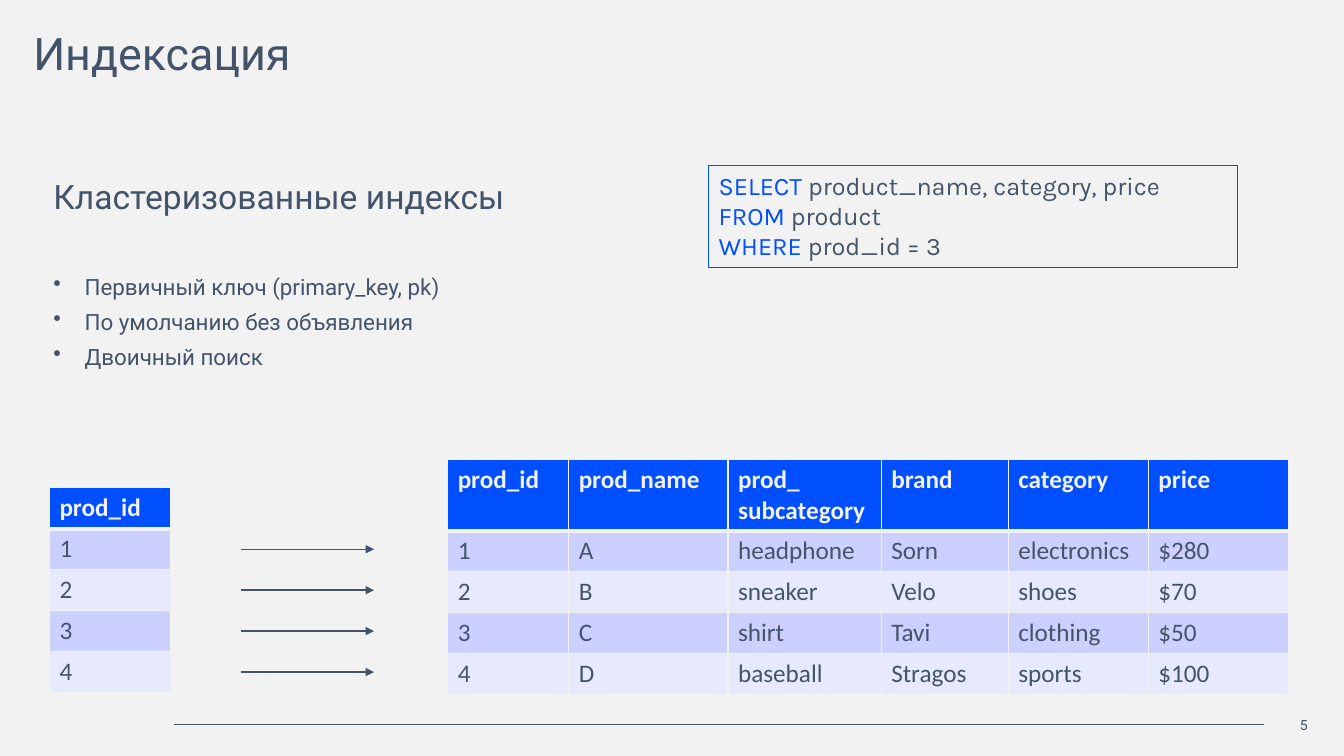
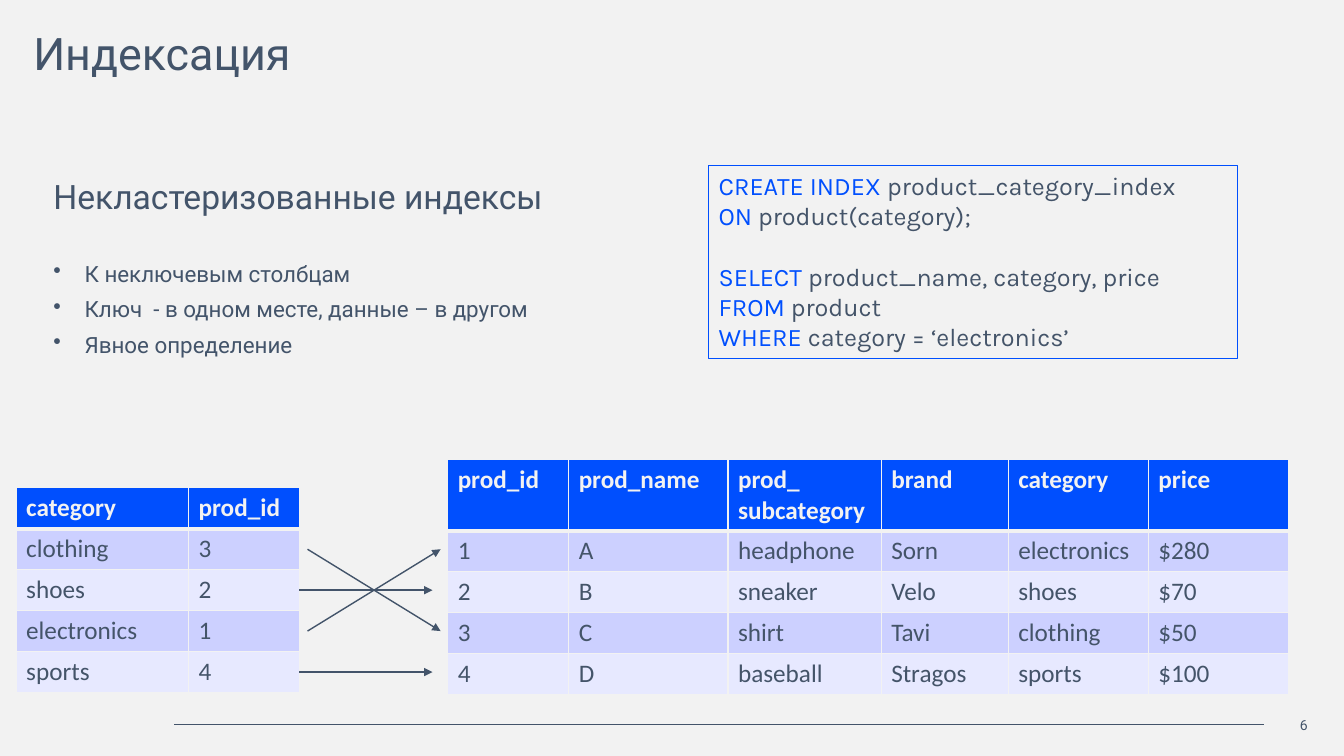
"""Build two slides on clustered and non-clustered database indexes."""
from lxml.etree import SubElement
from pptx import Presentation
from pptx.dml.color import RGBColor
from pptx.enum.shapes import MSO_CONNECTOR, MSO_SHAPE
from pptx.enum.text import MSO_ANCHOR, MSO_AUTO_SIZE, PP_ALIGN
from pptx.oxml import parse_xml
from pptx.oxml.ns import nsdecls, qn
from pptx.util import Inches, Pt

PAPER, INK, CELL_INK, BLUE = "F2F2F2", "43546A", "445469", "004FFE"
BANDS = ("CCD0FF", "E7E9FF")
TITLE = "Индексация"
ROW = 2.03 / 5
TALL_HEADER = 0.69
TABLES_BOTTOM = 6.87
ARROW_LENGTH = 1.32
CODE_LINE = 21.6

PRODUCTS = [
    ("prod_id", "prod_name", "prod_\nsubcategory", "brand", "category", "price"),
    ("1", "A", "headphone", "Sorn", "electronics", "$280"),
    ("2", "B", "sneaker", "Velo", "shoes", "$70"),
    ("3", "C", "shirt", "Tavi", "clothing", "$50"),
    ("4", "D", "baseball", "Stragos", "sports", "$100"),
]
PRODUCT_LEFT, PRODUCT_COLUMNS = 4.44, (1.2, 1.58, 1.52, 1.26, 1.39, 1.39)

TOPICS = [
    {
        "number": "5",
        "heading": "Кластеризованные индексы",
        "heading_gap": 40,
        "points": ["Первичный ключ (primary_key, pk)", "По умолчанию без объявления", "Двоичный поиск"],
        "statements": [
            [("SELECT", " product_name, category, price"), ("FROM", " product"), ("WHERE", " prod_id = 3")],
        ],
        "code_height": 1.01,
        "index": [("prod_id",), ("1",), ("2",), ("3",), ("4",)],
        "index_left": 0.49,
        "index_columns": (1.2,),
        "arrows": [(2.39, row, row) for row in range(1, 5)],
    },
    {
        "number": "6",
        "heading": "Некластеризованные индексы",
        "heading_gap": 31,
        "points": ["К неключевым столбцам", "Ключ  - в одном месте, данные – в другом", "Явное определение"],
        "statements": [
            [("CREATE INDEX", " product_category_index"), ("ON", " product(category);")],
            [("SELECT", " product_name, category, price"), ("FROM", " product"),
             ("WHERE", " category = ‘electronics’")],
        ],
        "code_height": 1.92,
        "index": [("category", "prod_id"), ("clothing", "3"), ("shoes", "2"), ("electronics", "1"), ("sports", "4")],
        "index_left": 0.16,
        "index_columns": (1.71, 1.1),
        "arrows": [(3.05, 1, 3), (2.97, 2, 2), (3.05, 3, 1), (2.97, 4, 4)],
    },
]


def rgb(code):
    return RGBColor.from_string(code)


def box(*lengths):
    return [Inches(length) for length in lengths]


def style(paragraph, size, face, color, bold=False):
    for run in paragraph.runs:
        run.font.size, run.font.name, run.font.bold = Pt(size), face, bold
        run.font.color.rgb = rgb(color)


def prepare(frame, left=0, top=0, right=0, bottom=0, anchor=MSO_ANCHOR.TOP):
    frame.word_wrap, frame.auto_size, frame.vertical_anchor = True, MSO_AUTO_SIZE.NONE, anchor
    frame.margin_left, frame.margin_top, frame.margin_right, frame.margin_bottom = box(left, top, right, bottom)


def add_line(slide, start, end, arrow=False):
    line = slide.shapes.add_connector(MSO_CONNECTOR.STRAIGHT, *box(*start, *end))
    line.line.color.rgb, line.line.width = rgb(INK), Pt(1)
    if arrow:
        SubElement(line.line._get_or_add_ln(), qn("a:tailEnd"), type="triangle")
    SubElement(line._element.spPr, qn("a:effectLst"))


def add_frame(slide, number):
    title = slide.shapes.title
    title.left, title.top, title.width, title.height = box(0.33, 0.26, 10.53, 0.54)
    prepare(title.text_frame)
    title.text_frame.text = TITLE
    title.text_frame.paragraphs[0].alignment = PP_ALIGN.LEFT
    style(title.text_frame.paragraphs[0], 32, "Roboto", INK)
    add_line(slide, (1.73, 7.19), (12.54, 7.19))
    page = slide.shapes.add_textbox(*box(12.54, 7.1, 0.43, 0.19)).text_frame
    prepare(page, anchor=MSO_ANCHOR.MIDDLE)
    page.text = number
    page.paragraphs[0].alignment = PP_ALIGN.RIGHT
    style(page.paragraphs[0], 10, "Roboto", INK)


def add_outline(slide, heading, gap, points):
    frame = slide.shapes.add_textbox(*box(0.33, 1.55, 6.2, 2.6)).text_frame
    prepare(frame, 0.2, 0.2, 0.2)
    frame.text = "\n".join([heading, *points])
    first, *bullets = frame.paragraphs
    first.space_after = Pt(gap)
    style(first, 24, "Roboto", INK)
    for bullet in bullets:
        properties = bullet._p.get_or_add_pPr()
        properties.set("marL", str(Inches(0.31)))
        properties.set("indent", str(-Inches(0.31)))
        SubElement(properties, qn("a:buChar"), char="•")
        bullet.space_after = Pt(6)
        style(bullet, 16, "Roboto", INK)


def add_code(slide, statements, height):
    panel = slide.shapes.add_shape(MSO_SHAPE.RECTANGLE, *box(7.03, 1.64, 5.24, height))
    panel.shadow.inherit = False
    panel.fill.background()
    panel.line.color.rgb, panel.line.width = rgb(BLUE), Pt(0.75)
    frame = panel.text_frame
    prepare(frame, 0.1, 0.05, 0.1, 0.05)
    lines = [(keyword, rest, bool(order) and not position)
             for order, statement in enumerate(statements)
             for position, (keyword, rest) in enumerate(statement)]
    for order, (keyword, rest, opens_statement) in enumerate(lines):
        paragraph = frame.add_paragraph() if order else frame.paragraphs[0]
        paragraph.alignment = PP_ALIGN.LEFT
        if opens_statement:
            paragraph.space_before = Pt(CODE_LINE)
        for part in (keyword, rest):
            paragraph.add_run().text = part
        style(paragraph, 18, "Karla", CELL_INK)
        paragraph.runs[0].font.color.rgb = rgb(BLUE)


def add_borders(cell, row):
    weights = {"L": 1, "R": 1, "T": 3 if row == 1 else 1, "B": 1 if row else 3}
    for order, (side, weight) in enumerate(weights.items()):
        cell._tc.get_or_add_tcPr().insert(order, parse_xml(
            f'<a:ln{side} {nsdecls("a")} w="{Pt(weight)}"><a:solidFill>'
            f'<a:srgbClr val="{PAPER}"/></a:solidFill></a:ln{side}>'))


def add_grid(slide, records, left, columns, header):
    height = header + ROW * (len(records) - 1)
    table = slide.shapes.add_table(
        len(records), len(columns), *box(left, TABLES_BOTTOM - height, sum(columns), height)).table
    table.horz_banding = False
    for column, width in zip(table.columns, columns):
        column.width = Inches(width)
    for row, record in enumerate(records):
        table.rows[row].height = Inches(ROW if row else header)
        for column, value in enumerate(record):
            cell = table.cell(row, column)
            cell.text_frame.text = value
            cell.fill.solid()
            cell.fill.fore_color.rgb = rgb(BANDS[(row - 1) % 2] if row else BLUE)
            add_borders(cell, row)
            for paragraph in cell.text_frame.paragraphs:
                style(paragraph, 18, "Calibri", CELL_INK if row else PAPER, bold=not row)


def row_middle(row):
    return TABLES_BOTTOM - ROW * (len(PRODUCTS) - row - 0.5)


def main():
    deck = Presentation()
    deck.slide_width, deck.slide_height = box(13.33, 7.5)
    background = deck.slide_master.background.fill
    background.solid()
    background.fore_color.rgb = rgb(PAPER)
    for topic in TOPICS:
        slide = deck.slides.add_slide(deck.slide_layouts[5])
        add_frame(slide, topic["number"])
        add_outline(slide, topic["heading"], topic["heading_gap"], topic["points"])
        add_grid(slide, PRODUCTS, PRODUCT_LEFT, PRODUCT_COLUMNS, TALL_HEADER)
        add_grid(slide, topic["index"], topic["index_left"], topic["index_columns"], ROW)
        for left, source, target in topic["arrows"]:
            add_line(slide, (left, row_middle(source)), (left + ARROW_LENGTH, row_middle(target)), arrow=True)
        add_code(slide, topic["statements"], topic["code_height"])
    deck.save("out.pptx")


if __name__ == "__main__":
    main()
